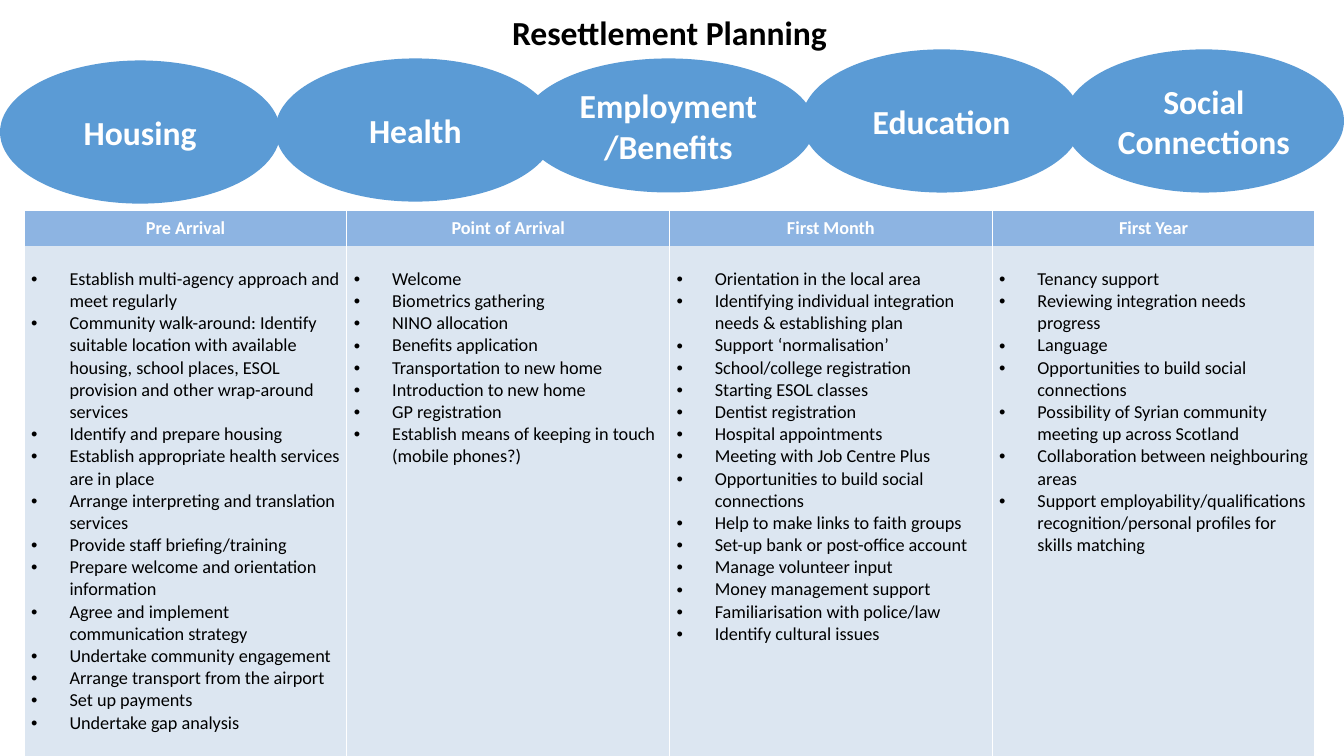
from lxml import etree
from pptx import Presentation
from pptx.dml.color import RGBColor
from pptx.enum.shapes import MSO_SHAPE
from pptx.enum.text import MSO_ANCHOR, MSO_AUTO_SIZE, PP_ALIGN
from pptx.oxml.ns import qn
from pptx.util import Inches, Pt

ELLIPSE = MSO_SHAPE.OVAL
TOP, MIDDLE = MSO_ANCHOR.TOP, MSO_ANCHOR.MIDDLE
LEFT, CENTER = PP_ALIGN.LEFT, PP_ALIGN.CENTER
NO_AUTOSIZE = MSO_AUTO_SIZE.NONE
TITLE_ONLY = 5

BLACK = RGBColor(0x00, 0x00, 0x00)
WHITE = RGBColor(0xFF, 0xFF, 0xFF)
BLUE = RGBColor(0x5B, 0x9B, 0xD5)
HEADER_BLUE = RGBColor(0x8D, 0xB4, 0xE2)
PALE_BLUE = RGBColor(0xDC, 0xE6, 0xF1)

THEMES = [
    ("Employment/Benefits", 5.18, 0.58, 2.9, 1.33),
    ("Social Connections", 10.55, 0.49, 2.78, 1.42),
    ("Education", 7.95, 0.49, 2.78, 1.42),
    ("Health", 2.73, 0.58, 2.78, 1.42),
    ("Housing", 0, 0.6, 2.78, 1.42),
]

STAGES = {
    "Pre Arrival": [
        "Establish multi-agency approach and meet regularly",
        "Community walk-around: Identify suitable location with available housing, "
        "school places, ESOL provision and other wrap-around services",
        "Identify and prepare housing",
        "Establish appropriate health services are in place",
        "Arrange interpreting and translation services",
        "Provide staff briefing/training",
        "Prepare welcome and orientation information",
        "Agree and implement communication strategy",
        "Undertake community engagement",
        "Arrange transport from the airport",
        "Set up payments",
        "Undertake gap analysis",
    ],
    "Point of Arrival": [
        "Welcome",
        "Biometrics gathering",
        "NINO allocation",
        "Benefits application",
        "Transportation to new home",
        "Introduction to new home",
        "GP registration",
        "Establish means of keeping in touch (mobile phones?)",
    ],
    "First Month": [
        "Orientation in the local area",
        "Identifying individual integration needs & establishing plan",
        "Support ‘normalisation’",
        "School/college registration",
        "Starting ESOL classes",
        "Dentist registration",
        "Hospital appointments",
        "Meeting with Job Centre Plus",
        "Opportunities to build social connections",
        "Help to make links to faith groups",
        "Set-up bank or post-office account",
        "Manage volunteer input",
        "Money management support",
        "Familiarisation with police/law",
        "Identify cultural issues",
    ],
    "First Year": [
        "Tenancy support",
        "Reviewing integration needs progress",
        "Language",
        "Opportunities to build social connections",
        "Possibility of Syrian community meeting up across Scotland",
        "Collaboration between neighbouring areas",
        "Support employability/qualifications recognition/personal profiles for skills matching",
    ],
}


class PlanSlide:
    """Holds the text style and the current slide, and adds its elements."""

    font_name = "Calibri"
    heading_size = Pt(24)
    table_size = Pt(13)

    def __init__(self, deck):
        self.slide = deck.slides.add_slide(deck.slide_layouts[TITLE_ONLY])

    def apply(self, target, values):
        for name, value in values.items():
            setattr(target, name, value)

    def fill_text(self, frame, lines, size, color, bold, alignment):
        frame.text = "\n".join(lines)
        style = {"name": self.font_name, "size": size, "bold": bold}
        for para in frame.paragraphs:
            para.alignment = alignment
            for span in para.runs:
                self.apply(span.font, style)
                span.font.color.rgb = color

    def title(self, text, left, top, width, height):
        box = self.slide.shapes.title
        self.apply(box, {"left": Inches(left), "top": Inches(top),
                         "width": Inches(width), "height": Inches(height)})
        self.apply(box.text_frame, {"vertical_anchor": TOP, "word_wrap": True,
                                    "auto_size": NO_AUTOSIZE})
        self.fill_text(box.text_frame, [text], self.heading_size, BLACK, True, CENTER)

    def ellipse(self, text, left, top, width, height):
        shape = self.slide.shapes.add_shape(
            ELLIPSE, Inches(left), Inches(top), Inches(width), Inches(height))
        shape.shadow.inherit = False
        shape.fill.solid()
        shape.fill.fore_color.rgb = BLUE
        shape.line.fill.background()
        self.apply(shape.text_frame, {"vertical_anchor": MIDDLE, "word_wrap": True})
        self.fill_text(shape.text_frame, [text], self.heading_size, WHITE, True, CENTER)

    def borders(self, cell):
        properties = cell._tc.get_or_add_tcPr()
        for side in ("a:lnL", "a:lnR"):
            line = etree.SubElement(properties, qn(side), w=str(Pt(1)))
            fill = etree.SubElement(line, qn("a:solidFill"))
            etree.SubElement(fill, qn("a:srgbClr"), val=str(WHITE))
        for side in ("a:lnT", "a:lnB"):
            line = etree.SubElement(properties, qn(side), w="0")
            etree.SubElement(line, qn("a:noFill"))

    def cell(self, cell, fill, anchor, top_margin):
        self.borders(cell)
        cell.fill.solid()
        cell.fill.fore_color.rgb = fill
        self.apply(cell, {"vertical_anchor": anchor,
                          "margin_left": Inches(0.07), "margin_right": Inches(0.07),
                          "margin_top": Inches(top_margin), "margin_bottom": 0})

    def bullets(self, frame):
        for para in frame.paragraphs:
            properties = para._p.get_or_add_pPr()
            properties.set("marL", str(Inches(0.38)))
            properties.set("indent", str(Inches(-0.38)))
            etree.SubElement(properties, qn("a:buFont"), typeface="Arial")
            etree.SubElement(properties, qn("a:buChar"), char="•")

    def table(self, stages, left, top, width, row_heights):
        table = self.slide.shapes.add_table(
            len(row_heights), len(stages), Inches(left), Inches(top),
            Inches(width), Inches(sum(row_heights))).table
        self.apply(table, {"first_row": False, "horz_banding": False})
        for row, height in zip(table.rows, row_heights):
            row.height = Inches(height)
        for column, (stage, actions) in enumerate(stages.items()):
            header, body = table.cell(0, column), table.cell(1, column)
            self.cell(header, HEADER_BLUE, MIDDLE, 0)
            self.fill_text(header.text_frame, [stage], self.table_size, WHITE, True, CENTER)
            self.cell(body, PALE_BLUE, TOP, 0.22)
            self.fill_text(body.text_frame, actions, self.table_size, BLACK, False, LEFT)
            self.bullets(body.text_frame)


def main():
    deck = Presentation()
    deck.slide_width, deck.slide_height = Inches(13.33), Inches(7.5)
    page = PlanSlide(deck)
    page.table(STAGES, 0.24, 2.09, 12.8, [0.35, 5.2])
    for theme in THEMES:
        page.ellipse(*theme)
    page.title("Resettlement Planning", 0.24, 0.07, 12.8, 0.5)
    deck.save("out.pptx")


if __name__ == "__main__":
    main()
